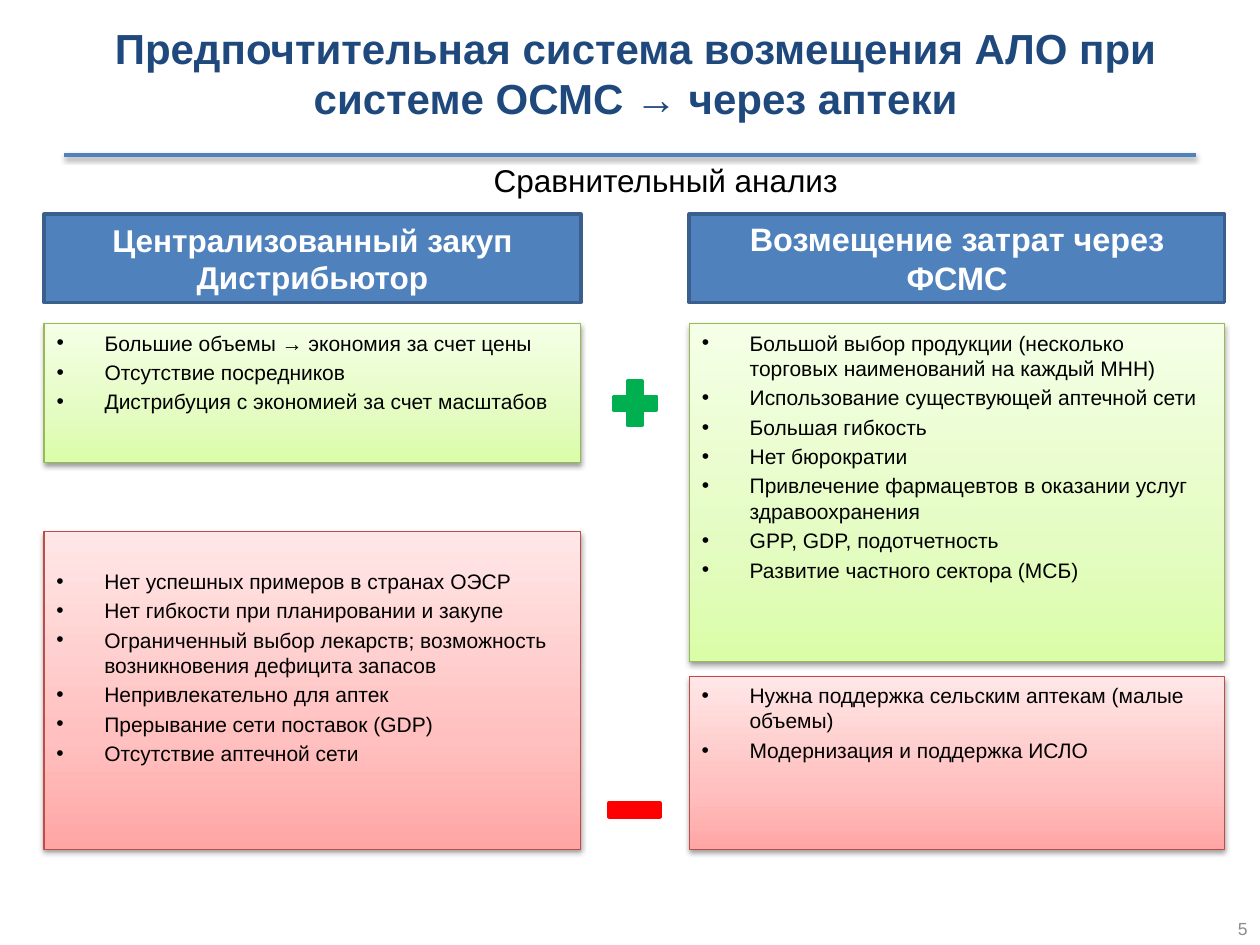
from dataclasses import dataclass

from lxml import etree
from pptx import Presentation
from pptx import util as u
from pptx.dml.color import RGBColor
from pptx.enum import shapes, text
from pptx.oxml.ns import qn

COLUMNS, ROWS = 100, 75  # square grid cells of 0.1 inch
CELL = u.Inches(0.1)
COMPARISON_LAYOUT = 4


@dataclass(frozen=True)
class Theme:
    font: str = "Arial"
    title: str = "1F497D"
    accent: str = "4F81BD"
    accent_edge: str = "3A5F8C"
    ink: str = "000000"
    paper: str = "FFFFFF"
    muted: str = "8C8C8C"
    plus: str = "00B050"
    minus: str = "FF0000"
    pros: tuple = ("DAFDA7", "E4FCC2", "F5FFE7")
    pros_edge: str = "98B955"
    cons: tuple = ("FFA6A5", "FFC0BF", "FFE7E7")
    cons_edge: str = "BF4C48"
    title_size: float = 24
    heading_size: float = 18
    list_size: float = 12
    number_size: float = 10


THEME = Theme()


@dataclass(frozen=True)
class Box:
    """A rectangle in grid columns and rows."""
    left: float
    top: float
    width: float
    height: float

    def lengths(self):
        return [round(n * CELL) for n in (self.left, self.top, self.width, self.height)]

    def place(self, shape):
        shape.left, shape.top, shape.width, shape.height = self.lengths()


def color(value):
    return RGBColor.from_string(value)


def add_element(parent, tag, **attributes):
    element = etree.SubElement(parent, qn(tag))
    for name, value in attributes.items():
        element.set(name, str(value))
    return element


def add_run(paragraph, words, size, ink, bold=False):
    run = paragraph.add_run()
    run.text = words
    run.font.name, run.font.size, run.font.bold = THEME.font, u.Pt(size), bold
    run.font.color.rgb = color(ink)


def paint(shape, fill, edge, width):
    shape.shadow.inherit = False
    shape.fill.solid()
    shape.fill.fore_color.rgb = color(fill)
    shape.line.color.rgb = color(edge)
    shape.line.width = u.Pt(width)


def add_soft_shadow(shape):
    properties = shape._element.spPr
    effects = properties.find(qn("a:effectLst"))
    if effects is None:
        effects = add_element(properties, "a:effectLst")
    shadow = add_element(effects, "a:outerShdw", blurRad=u.Pt(3.1), dist=u.Pt(1.6),
                         dir=5400000, rotWithShape=0)
    black = add_element(shadow, "a:srgbClr", val=THEME.ink)
    add_element(black, "a:alpha", val=38000)


def set_gradient(shape, shades):
    """Blend the shades from the bottom edge to the top."""
    properties = shape._element.spPr
    gradient = etree.Element(qn("a:gradFill"), rotWithShape="1")
    stops = add_element(gradient, "a:gsLst")
    for position, shade in zip((0, 35000, 100000), shades):
        add_element(add_element(stops, "a:gs", pos=position), "a:srgbClr", val=shade)
    add_element(gradient, "a:lin", ang=16200000, scaled=1)
    properties.replace(properties.find(qn("a:solidFill")), gradient)


def prepare_frame(shape, anchor, wrap=True):
    frame = shape.text_frame
    frame.word_wrap = wrap
    frame.auto_size = text.MSO_AUTO_SIZE.NONE
    frame.vertical_anchor = anchor
    return frame


def fill_title(slide, box):
    title = slide.shapes.title
    box.place(title)
    paragraph = prepare_frame(title, text.MSO_ANCHOR.MIDDLE).paragraphs[0]
    paragraph.alignment = text.PP_ALIGN.CENTER
    add_run(paragraph, "Предпочтительная система возмещения АЛО при системе ОСМС → через аптеки",
            THEME.title_size, THEME.title, bold=True)


def add_rule(slide, left, right, row):
    start, end, height = (round(n * CELL) for n in (left, right, row))
    rule = slide.shapes.add_connector(shapes.MSO_CONNECTOR.STRAIGHT, start, height, end, height)
    rule.line.color.rgb = color(THEME.accent)
    rule.line.width = u.Pt(2)
    add_soft_shadow(rule)


def add_label(slide, box, words, size, ink, alignment, anchor, wrap=True):
    label = slide.shapes.add_textbox(*box.lengths())
    paragraph = prepare_frame(label, anchor, wrap).paragraphs[0]
    paragraph.alignment = alignment
    add_run(paragraph, words, size, ink)


def fill_heading(shape, box, lines, size):
    box.place(shape)
    paint(shape, THEME.accent, THEME.accent_edge, 2)
    paragraph = prepare_frame(shape, text.MSO_ANCHOR.MIDDLE).paragraphs[0]
    paragraph.alignment = text.PP_ALIGN.CENTER
    paragraph.space_before = u.Pt(0)
    for index, line in enumerate(lines):
        if index:
            paragraph.add_line_break()
        add_run(paragraph, line, size, THEME.paper, bold=True)


def fill_list(shape, box, items, shades, edge, top_inset=0.05):
    box.place(shape)
    paint(shape, shades[0], edge, 0.75)
    set_gradient(shape, shades)
    add_soft_shadow(shape)
    frame = prepare_frame(shape, text.MSO_ANCHOR.TOP)
    frame.margin_top = u.Inches(top_inset)
    indent = u.Inches(0.38)
    for index, item in enumerate(items):
        paragraph = frame.add_paragraph() if index else frame.paragraphs[0]
        paragraph.alignment = text.PP_ALIGN.LEFT
        paragraph.space_before = u.Pt(0.2 * THEME.list_size if index else 0)
        properties = paragraph._p.get_or_add_pPr()
        properties.set("marL", str(indent))
        properties.set("indent", str(-indent))
        add_element(properties, "a:buFont", typeface=THEME.font)
        add_element(properties, "a:buChar", char="•")
        add_run(paragraph, item, THEME.list_size, THEME.ink)


def fill_option(slide, box, holders, heading, heading_size, pros, pros_rows, cons, cons_rows,
                cons_inset=0.05):
    """Stack a heading, the advantages and the drawbacks in one column."""
    heading_holder, pros_holder = (slide.placeholders[index] for index in holders)
    fill_heading(heading_holder, Box(box.left, box.top, box.width, 7), heading, heading_size)
    fill_list(pros_holder, Box(box.left, box.top + 8.7, box.width, pros_rows),
              pros, THEME.pros, THEME.pros_edge)
    cons_box = Box(box.left, box.top + box.height - cons_rows, box.width, cons_rows)
    panel = slide.shapes.add_shape(shapes.MSO_SHAPE.RECTANGLE, *cons_box.lengths())
    fill_list(panel, cons_box, cons, THEME.cons, THEME.cons_edge, cons_inset)


def add_sign(slide, box, kind, shade):
    sign = slide.shapes.add_shape(kind, *box.lengths())
    paint(sign, shade, shade, 2)


def build_comparison(presentation):
    slide = presentation.slides.add_slide(presentation.slide_layouts[COMPARISON_LAYOUT])

    # Title band
    fill_title(slide, Box(5.9, 0, 89.1, 11.5))
    add_rule(slide, 5.1, COLUMNS - 5.1, 12.3)
    add_label(slide, Box(38.2, 12.3, 29.6, 4), "Сравнительный анализ", THEME.heading_size,
              THEME.ink, text.PP_ALIGN.LEFT, text.MSO_ANCHOR.TOP, wrap=False)

    # Two options side by side
    fill_option(
        slide, Box(3.5, 17, 42.6, 50.4), (1, 2),
        ["Централизованный закуп", "Дистрибьютор"], THEME.heading_size,
        ["Большие объемы → экономия за счет цены",
         "Отсутствие посредников",
         "Дистрибуция с экономией за счет масштабов"], 11,
        ["Нет успешных примеров в странах ОЭСР",
         "Нет гибкости при планировании и закупе",
         "Ограниченный выбор лекарств; возможность возникновения дефицита запасов",
         "Непривлекательно для аптек",
         "Прерывание сети поставок (GDP)",
         "Отсутствие аптечной сети"], 25.2, cons_inset=0.29)
    fill_option(
        slide, Box(54.7, 17, 42.5, 50.4), (3, 4),
        ["Возмещение затрат через ФСМС"], THEME.heading_size + 0.5,
        ["Большой выбор продукции (несколько торговых наименований на каждый МНН)",
         "Использование существующей аптечной сети",
         "Большая гибкость",
         "Нет бюрократии",
         "Привлечение фармацевтов в оказании услуг здравоохранения",
         "GPP, GDP, подотчетность",
         "Развитие частного сектора (МСБ)"], 26.8,
        ["Нужна поддержка сельским аптекам (малые объемы)",
         "Модернизация и поддержка ИСЛО"], 13.7)

    # Signs between the options
    add_sign(slide, Box(48.1, 29.6, 4.6, 4.8), shapes.MSO_SHAPE.MATH_PLUS, THEME.plus)
    add_sign(slide, Box(47.6, 61.9, 5.5, 4.8), shapes.MSO_SHAPE.MATH_MINUS, THEME.minus)

    # Page number
    add_label(slide, Box(86.2, 71.4, 13.8, 3.6), "5", THEME.number_size, THEME.muted,
              text.PP_ALIGN.RIGHT, text.MSO_ANCHOR.BOTTOM)


def main():
    presentation = Presentation()
    presentation.slide_width, presentation.slide_height = COLUMNS * CELL, ROWS * CELL
    build_comparison(presentation)
    presentation.save("out.pptx")


if __name__ == "__main__":
    main()
